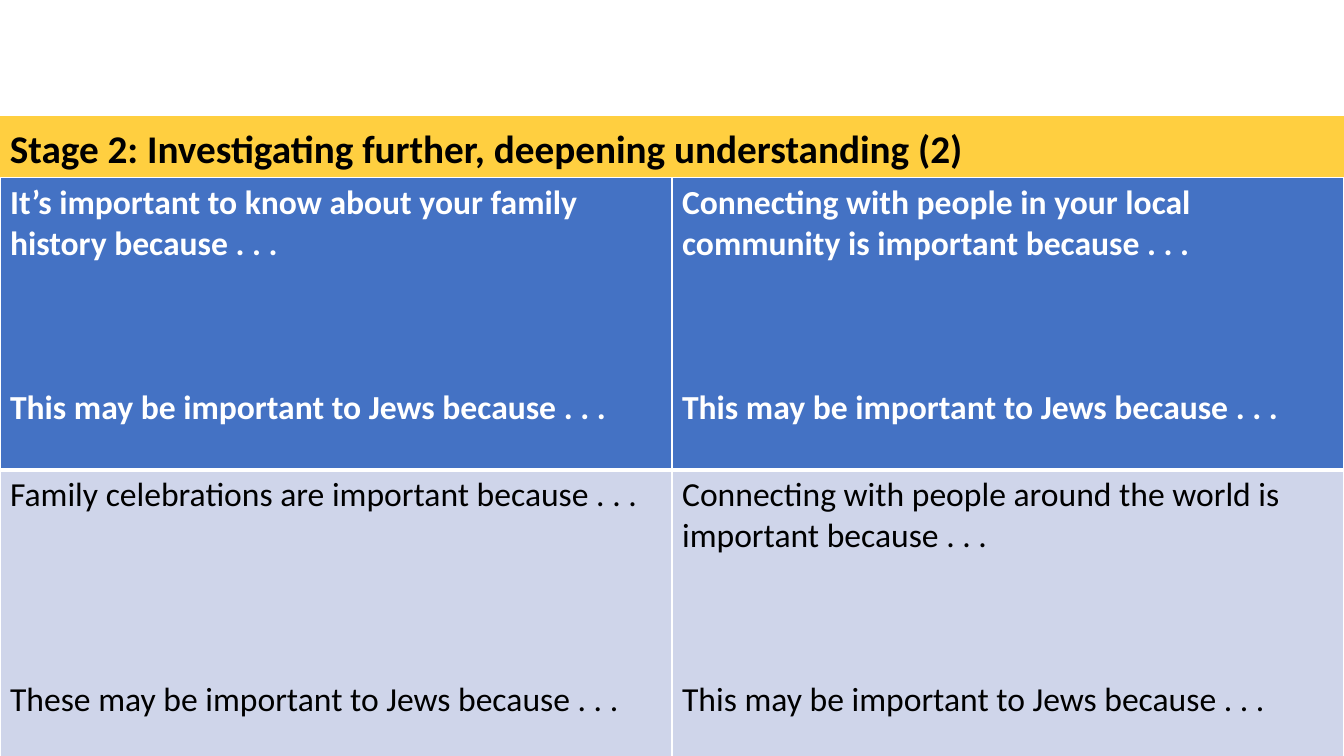
from lxml import etree
from pptx import Presentation
from pptx.dml.color import RGBColor
from pptx.enum.shapes import MSO_SHAPE
from pptx.enum.text import MSO_AUTO_SIZE
from pptx.oxml.ns import qn
from pptx.util import Inches, Pt

RECT = MSO_SHAPE.RECTANGLE
GROW = MSO_AUTO_SIZE.SHAPE_TO_FIT_TEXT
COLORS = {"gold": "FFCF40", "white": "FFFFFF", "black": "000000",
          "blue": "4472C4", "pale": "CFD5EA"}
WIDE = 13.33
LINE = 29.3
SHARED = "This may be important to Jews because . . ."
ROWS = [
    dict(high=2.9, fill="blue", ink="white", bold=True, base=3, cells=[
        ("It’s important to know about your family history because . . .", SHARED, 3),
        ("Connecting with people in your local community is important because . . .",
         SHARED, 3)]),
    dict(high=3.3, fill="pale", ink="black", bold=False, base=1, cells=[
        ("Family celebrations are important because . . .",
         "These may be important to Jews because . . .", 4),
        ("Connecting with people around the world is important because . . .",
         SHARED, 3)]),
]


def paint(fill, color):
    fill.solid()
    fill.fore_color.rgb = RGBColor.from_string(COLORS[color])


def write(para, text, size=24, color="black", bold=False, gap=0):
    run = para.add_run()
    run.text = text
    run.font.name = "Calibri"
    run.font.size = Pt(size)
    run.font.bold = bold
    run.font.color.rgb = RGBColor.from_string(COLORS[color])
    if gap:
        para.space_before = Pt(gap)


def edge(cell, base):
    props = cell._tc.get_or_add_tcPr()
    sides = [("a:lnL", 1), ("a:lnR", 1), ("a:lnT", 1), ("a:lnB", base)]
    for spot, (side, width) in enumerate(sides):
        line = etree.Element(qn(side), w=str(Pt(width)))
        fill = etree.SubElement(line, qn("a:solidFill"))
        etree.SubElement(fill, qn("a:srgbClr"), val=COLORS["white"])
        props.insert(spot, line)


def add_band(slide, left, top, width, height):
    band = slide.shapes.add_shape(RECT, Inches(left), Inches(top),
                                  Inches(width), Inches(height))
    band.shadow.inherit = False
    paint(band.fill, "white")
    band.line.fill.background()


def add_title(slide, left, top, width, height):
    box = slide.shapes.add_textbox(Inches(left), Inches(top),
                                   Inches(width), Inches(height))
    frame = box.text_frame
    frame.word_wrap = True
    frame.auto_size = GROW
    write(frame.paragraphs[0],
          "Stage 2: Investigating further, deepening understanding (2)",
          size=28, bold=True)


def add_grid(slide, left, top, width):
    high = sum(row["high"] for row in ROWS)
    table = slide.shapes.add_table(len(ROWS), 2, Inches(left), Inches(top),
                                   Inches(width), Inches(high)).table
    for r, row in enumerate(ROWS):
        table.rows[r].height = Inches(row["high"])
        style = dict(color=row["ink"], bold=row["bold"])
        for c, (first, last, skip) in enumerate(row["cells"]):
            cell = table.cell(r, c)
            paint(cell.fill, row["fill"])
            edge(cell, row["base"])
            frame = cell.text_frame
            write(frame.paragraphs[0], first, **style)
            write(frame.add_paragraph(), last, gap=skip * LINE, **style)


def main():
    deck = Presentation()
    deck.slide_width = Inches(WIDE)
    deck.slide_height = Inches(7.5)
    slide = deck.slides.add_slide(deck.slide_layouts[6])
    paint(slide.background.fill, "gold")
    add_band(slide, 0, -0.03, WIDE, 1.18)
    add_title(slide, 0, 1.18, WIDE, 0.57)
    add_grid(slide, 0, 1.76, WIDE)
    deck.save("out.pptx")


if __name__ == "__main__":
    main()
